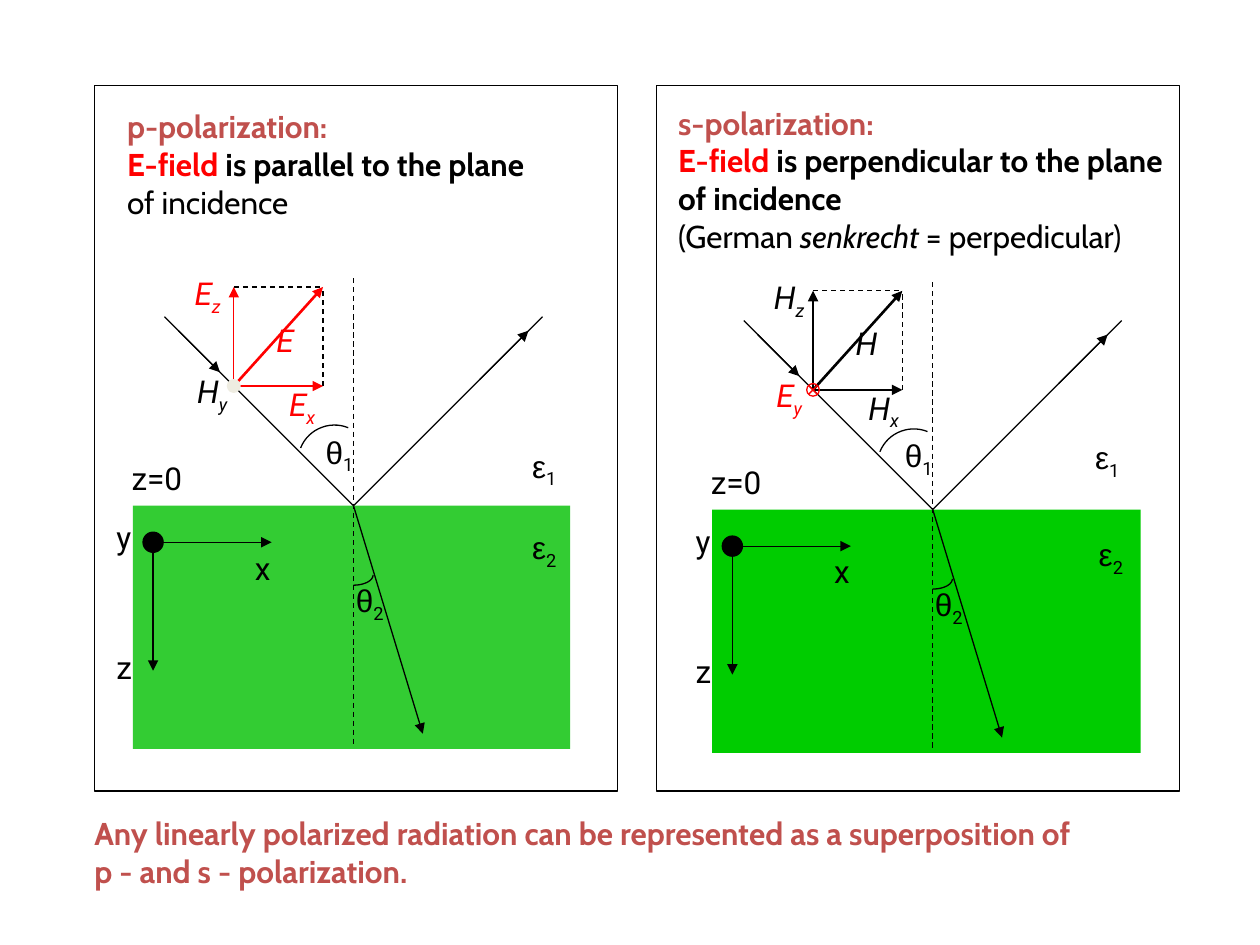
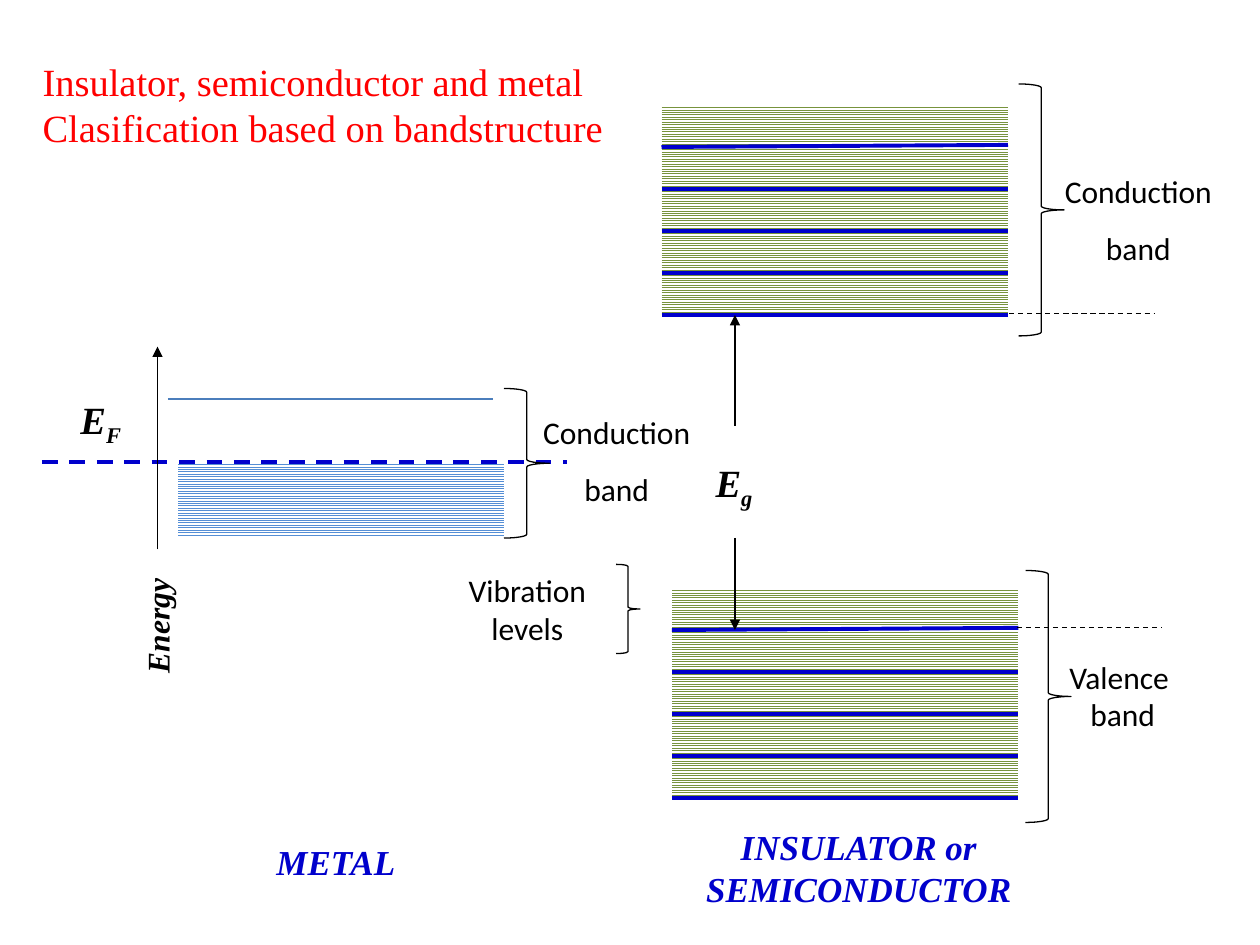
from math import cos, radians, sin

from lxml import etree
from pptx import Presentation
from pptx.dml.color import RGBColor
from pptx.enum.dml import MSO_LINE, MSO_PATTERN
from pptx.enum.shapes import MSO_CONNECTOR, MSO_SHAPE
from pptx.enum.text import MSO_AUTO_SIZE, PP_ALIGN
from pptx.oxml.ns import qn
from pptx.util import Pt

RECT, OVAL, BRACE = MSO_SHAPE.RECTANGLE, MSO_SHAPE.OVAL, MSO_SHAPE.RIGHT_BRACE
STRAIGHT, DASH = MSO_CONNECTOR.STRAIGHT, MSO_LINE.DASH
NARROW, LIGHT = MSO_PATTERN.NARROW_HORIZONTAL, MSO_PATTERN.LIGHT_HORIZONTAL
LEFT, MID = PP_ALIGN.LEFT, PP_ALIGN.CENTER
FIT = MSO_AUTO_SIZE.SHAPE_TO_FIT_TEXT


class Theme:
    black, white, red = "000000", "FFFFFF", "FF0000"
    brick, cream, blue = "C0504D", "EEECE1", "0000CC"
    steel, sky, olive = "4B7EBC", "558ED5", "77933C"
    field = {"E": red, "H": black}
    body, mark, title = 18, 20, 22
    thin, bold, thick = 0.75, 1.5, 2.25
    head, sign, greek = "Cabin", "Roboto", "Arial"
    plain, serif = "Calibri", "Times New Roman"


# Slide 1. Places in a panel are measured from the point where the ray hits.
PLAIN = {"color": Theme.black, "bold": False}
SLANT = {**PLAIN, "italic": True}
FIELD = ("E-field", {"color": Theme.red})

PANELS = [
    {"frame": 54, "hit": (202, 289), "ground": ("33CC33", 249.8),
     "box": (65.5, 57.6, 253.4, 72), "vector": "E", "normal": "H", "eps": [(95, -37.4), (95, 9.4)],
     "head": [["p-polarization:"],
              [FIELD, (" is parallel to the plane", {"color": Theme.black})],
              [("of incidence", PLAIN)]]},
    {"frame": 375, "hit": (533, 291.2), "ground": ("00CC00", 244.8),
     "box": (380.4, 55.7, 295.2, 93.6), "vector": "H", "normal": "E", "eps": [(85.7, -44.6), (87.8, 10.8)],
     "head": [["s-polarization:"],
              [FIELD, (" is perpendicular to the plane of incidence", {"color": Theme.black})],
              [("(German ", PLAIN), ("senkrecht ", SLANT), ("= perpedicular)", PLAIN)]]},
]
SIGNS = [("x", -63.4, 20.9, 23), ("z", -142.6, 77.8, 22.3), ("y", -142.6, 3.6, 23.8),
         ("z=0", -133.9, -30.2, 45.4), ("θ_1", -23, -45.4, 30.2), ("θ_2", -5.8, 39.6, 30.2)]
PARTS = [("_z", -97.9, -136.1), ("", -51.1, -109.4), ("_x", -43.9, -72.7)]
ROOM = 34
RAYS = [((0, -130), (0, 136), {"dash": True}),
        ((-108, -108), (0, 0), {}),
        ((-100, -100), (-76.3, -76.3), {"arrow": True}),
        ((0, 0), (108, -108), {}),
        ((72, -72), (100, -100), {"arrow": True}),
        ((0, 0), (39.6, 130.3), {"arrow": True}),
        ((-114.5, 15.1), (-114.5, 94.3), {"arrow": True}),
        ((-120.2, 20.9), (-46.8, 20.9), {"arrow": True})]
ARCS = [(-10.8, -25.2, 20.9, 20.9, 202), (0, 39.6, 11.2, 5.8, 0)]
SUMUP = [["Any linearly polarized radiation can be represented as a superposition of"],
         ["p - and s - polarization."]]

# Slide 2
TITLE = [["Insulator, semiconductor and metal"], ["Clasification based on bandstructure"]]
BANDS = [(384, 336), (378, 60)]
BRACES = [(288, 222, 26, 85.5), (586, 326, 26, 144), (582, 48, 26, 144), (352, 322.5, 13.7, 51)]
NAMES = [((302.4, 221.8, 100, 72.7), ["Conduction", "band"], 1.5),
         ((600.5, 84.2, 100, 72.7), ["Conduction", "band"], 1.5),
         ((603.4, 372.2, 76.3, 51), ["Valence ", "band"], None),
         ((256.3, 322.6, 90, 51), ["Vibration", "levels"], None)]
ENERGY = [("E_F", (38.9, 222.5, 38.9, 34)), ("E_g", (401.8, 258.5, 36.7, 34))]
KINDS = [((150.5, 476.6, 82.8, 31.7), [["METAL"]]),
         ((395.3, 468, 190.8, 55.4), [["INSULATOR or"], ["SEMICONDUCTOR"]])]
GAPS = [((576.7, 179.3), (660.2, 179.3), {"dash": True}),
        ((581, 358.6), (663.8, 358.6), {"dash": True}),
        ((420, 243.4), (420, 180), {"arrow": True}),
        ((420, 307.4), (420, 360), {"arrow": True}),
        ((90, 313.9), (90, 198), {"arrow": True})]


def rgb(code):
    return RGBColor.from_string(code)


def pts(*nums):
    return [Pt(n) for n in nums]


def style(font, size=None, name=None, color=None, bold=None, italic=None, sub=False):
    if size:
        font.size = Pt(size)
    if name:
        font.name = name
    if color:
        font.color.rgb = rgb(color)
    if bold is not None:
        font.bold = bold
    if italic is not None:
        font.italic = italic
    if sub:
        font._element.set("baseline", "-25000")


def put(slide, box, lines, align=LEFT, wrap=False, space=None, turn=0, **look):
    """Add text; each line lists strings or (string, font changes) pairs."""
    item = slide.shapes.add_textbox(*pts(*box))
    item.rotation = turn
    frame = item.text_frame
    frame.word_wrap = wrap
    frame.auto_size = FIT
    for n, line in enumerate(lines):
        para = frame.add_paragraph() if n else frame.paragraphs[0]
        para.alignment = align
        if space:
            para.line_spacing = space
        style(para.font, **look)
        for part in line:
            text, change = (part, {}) if isinstance(part, str) else part
            run = para.add_run()
            run.text = text
            style(run.font, **change)


def sign(slide, text, box, color=Theme.black, name=Theme.sign, size=Theme.body, **look):
    """Add a symbol; what follows an underscore is set as a subscript."""
    base, _, sub = text.partition("_")
    main = {"name": Theme.greek} if base in "θε" else {}
    line = [(base, main)] + ([(sub, {"sub": True})] if sub else [])
    put(slide, box, [line], color=color, name=name, size=size, **look)


def link(slide, start, end, color=Theme.black, width=Theme.thin, dash=False, arrow=False):
    item = slide.shapes.add_connector(STRAIGHT, *pts(*start, *end))
    item.line.color.rgb = rgb(color)
    item.line.width = Pt(width)
    if dash:
        item.line.dash_style = DASH
    if arrow:
        etree.SubElement(item.line._get_or_add_ln(), qn("a:tailEnd"), type="triangle")
    etree.SubElement(item._element.spPr, qn("a:effectLst"))


def paint(item, fill=None, line=None, grain=None):
    item.shadow.inherit = False
    if grain:
        item.fill.patterned()
        item.fill.pattern = grain
        item.fill.fore_color.rgb = rgb(fill)
        item.fill.back_color.rgb = rgb(Theme.white)
    elif fill:
        item.fill.solid()
        item.fill.fore_color.rgb = rgb(fill)
    else:
        item.fill.background()
    if line:
        item.line.color.rgb = rgb(line)
        item.line.width = Pt(Theme.thin)
    else:
        item.line.fill.background()


def shape(slide, kind, box, **look):
    paint(slide.shapes.add_shape(kind, *pts(*box)), **look)


def disc(slide, mid, rad, **look):
    shape(slide, OVAL, (mid[0] - rad, mid[1] - rad, 2 * rad, 2 * rad), **look)


def arc(slide, mid, wide, high, first):
    """Draw a quarter of an ellipse, clockwise from the first angle."""
    dots = [(Pt(mid[0] + wide * cos(radians(a))), Pt(mid[1] + high * sin(radians(a))))
            for a in range(first, first + 91, 6)]
    pen = slide.shapes.build_freeform(*dots[0])
    pen.add_line_segments(dots[1:], close=False)
    paint(pen.convert_to_shape(), line=Theme.black)


def panel(slide, spec):
    def at(x, y):
        return spec["hit"][0] + x, spec["hit"][1] + y

    color, wide = spec["ground"]
    put(slide, spec["box"], spec["head"], wrap=True, size=Theme.body,
        name=Theme.head, color=Theme.brick, bold=True)
    shape(slide, RECT, (*at(-126, 0), wide, 139), fill=color)
    for start, end, look in RAYS:
        link(slide, at(*start), at(*end), **look)
    disc(slide, at(-114.5, 20.9), 5.76, fill=Theme.black, line=Theme.black)
    for x, y, rx, ry, first in ARCS:
        arc(slide, at(x, y), rx, ry, first)
    for text, x, y, w in SIGNS:
        sign(slide, text, (*at(x, y), w, 29))
    for n, spot in enumerate(spec["eps"], 1):
        sign(slide, f"ε_{n}", (*at(*spot), 28.8, 29))

    vec, norm = spec["vector"], spec["normal"]
    ink = Theme.field[vec]
    foot, top, side, tip = at(-68.4, -68.4), at(-68.4, -125), at(-17.4, -68.4), at(-17.4, -125)
    link(slide, side, tip, dash=True)
    link(slide, top, tip, dash=True)
    for end, width in ((top, Theme.thin), (side, Theme.thin), (tip, Theme.bold)):
        link(slide, foot, end, ink, width, arrow=True)
    for sub, x, y in PARTS:
        sign(slide, vec + sub, (*at(x, y), ROOM, 29), ink, italic=True)
    sign(slide, norm + "_y", (*at(-96.5, -79.9), ROOM, 29), Theme.field[norm], italic=True)
    if norm == "H":
        disc(slide, foot, 3.6, fill=Theme.cream, line=Theme.cream)
    else:
        disc(slide, foot, 3.6, line=Theme.red)
        x, y = foot
        for d in (2.5, -2.5):
            link(slide, (x - 2.5, y - d), (x + 2.5, y + d), Theme.red)
    shape(slide, RECT, (spec["frame"], 49, 299, 403), line=Theme.black)


def band(slide, left, top, wide=198, step=24, count=5):
    for n in range(count):
        shape(slide, RECT, (left, top + n * step, wide, step), fill=Theme.olive, grain=LIGHT)
    for n in range(count):
        y = top + (n + 1) * step
        tilt = 0 if n else 1.2
        link(slide, (left, y), (left + wide, y - tilt), Theme.blue, Theme.thick)


def waves(slide):
    for spec in PANELS:
        panel(slide, spec)
    put(slide, (46.8, 461.5, 628, 50.4), SUMUP, wrap=True, size=Theme.body,
        name=Theme.head, color=Theme.brick, bold=True)


def levels(slide):
    serif = {"name": Theme.serif, "bold": True, "italic": True}
    shape(slide, RECT, (102, 264, 186, 42), fill=Theme.sky, grain=NARROW)
    link(slide, (96, 228), (282, 228), Theme.steel)
    for left, top in BANDS:
        band(slide, left, top)
    link(slide, (24, 264), (324, 264), Theme.blue, Theme.thick, dash=True)
    for box in BRACES:
        shape(slide, BRACE, box, line=Theme.black)
    for start, end, look in GAPS:
        link(slide, start, end, **look)
    for box, words, space in NAMES:
        put(slide, box, [[w] for w in words], MID, space=space,
            size=Theme.body, name=Theme.plain, color=Theme.black)
    for text, box in ENERGY:
        sign(slide, text, box, size=Theme.title, **serif)
    sign(slide, "Energy", (55.4, 342.7, 69, 29), turn=270, **serif)
    for box, lines in KINDS:
        put(slide, box, lines, MID, size=Theme.mark, color=Theme.blue, **serif)
    put(slide, (17.3, 29.5, 338.4, 60.5), TITLE, size=Theme.title,
        name=Theme.serif, color=Theme.red)


def main():
    deck = Presentation()
    deck.slide_width, deck.slide_height = pts(720, 540)
    for draw in (waves, levels):
        draw(deck.slides.add_slide(deck.slide_layouts[6]))
    deck.save("out.pptx")


if __name__ == "__main__":
    main()
